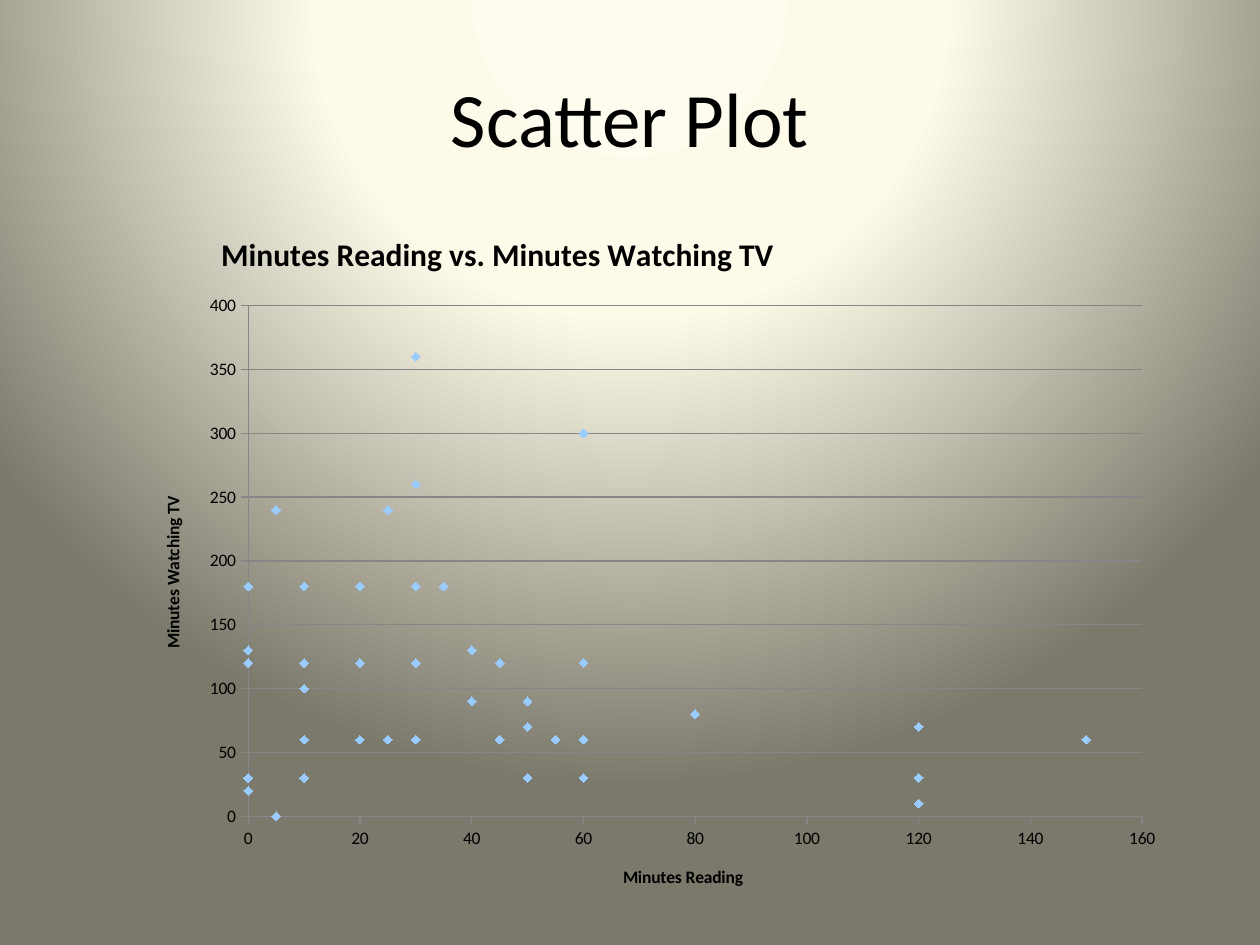
from pptx import Presentation
from pptx import util as u
from pptx.chart.data import XyChartData
from pptx.dml.color import RGBColor
from pptx.enum import chart as ch, text
from pptx.oxml import parse_xml
from pptx.oxml.ns import nsdecls, qn

COLORS = {"text": "000000", "marker": "99CCFF", "axis": "868686"}
BACKGROUND = [(0, "FEFCEE"), (40, "FDFAEA"), (100, "7B796B")]
FONT = "Calibri"

# Survey answers, one reader per position
READING = [
    30, 30, 60, 0, 60, 0, 0, 45, 20, 10, 10, 80, 0, 0,
    30, 120, 60, 10, 50, 60, 45, 150, 20, 30, 10, 5, 0, 40,
    45, 60, 25, 35, 10, 50, 60, 40, 120, 25, 5, 30, 120, 60,
    120, 0, 20, 0, 30, 50, 55, 30, 60, 10, 60, 60, 30, 20]
WATCHING = [
    260, 360, 300, 130, 30, 30, 180, 60, 60, 180, 30, 80, 20, 20,
    120, 10, 120, 120, 70, 60, 120, 60, 180, 120, 100, 240, 30, 130,
    60, 300, 240, 180, 60, 30, 120, 90, 30, 60, 0, 180, 30, 60,
    70, 120, 120, 180, 60, 90, 60, 60, 60, 120, 60, 120, 120, 180]


def rgb(name):
    return RGBColor.from_string(COLORS[name])


def write(frame, words, size=10, bold=False, align=text.PP_ALIGN.CENTER):
    paragraph = frame.paragraphs[0]
    paragraph.alignment = align
    run = paragraph.add_run()
    run.text = words
    font = run.font
    font.name, font.size, font.bold = FONT, u.Pt(size), bold
    font.color.rgb = rgb("text")


def layout(**percent):
    """Manual chart layout, in percent of the chart's size."""
    parts = {"layoutTarget": "inner"} if "w" in percent else {}
    parts.update(xMode="edge", yMode="edge")
    parts.update((side, value / 100) for side, value in percent.items())
    body = "".join(f'<c:{tag} val="{val}"/>' for tag, val in parts.items())
    return parse_xml(f'<c:layout {nsdecls("c")}><c:manualLayout>{body}'
                     '</c:manualLayout></c:layout>')


def no_fill():
    return parse_xml(f'<c:spPr {nsdecls("c", "a")}><a:noFill/>'
                     '<a:ln><a:noFill/></a:ln></c:spPr>')


class Deck:
    def __init__(self, width, height):
        self.prs = Presentation()
        self.prs.slide_width, self.prs.slide_height = u.Pt(width), u.Pt(height)
        self.slide = self.prs.slides.add_slide(self.prs.slide_layouts[6])

    def background(self, stops):
        fill = self.slide.background.fill
        fill.solid()
        properties = self.slide.background._cSld.bg.bgPr
        glow = "".join(f'<a:gs pos="{pos * 1000}"><a:srgbClr val="{color}"/></a:gs>'
                       for pos, color in stops)
        properties.replace(properties[0], parse_xml(
            f'<a:gradFill {nsdecls("a")} rotWithShape="1"><a:gsLst>{glow}</a:gsLst>'
            '<a:path path="circle"><a:fillToRect l="50000" t="-80000" '
            'r="50000" b="180000"/></a:path></a:gradFill>'))

    def heading(self, words, left, top, width, height):
        frame = self.slide.shapes.add_textbox(
            *map(u.Pt, (left, top, width, height))).text_frame
        frame.word_wrap = True
        frame.vertical_anchor = text.MSO_ANCHOR.MIDDLE
        write(frame, words, size=44)

    def chart_title(self, title, words, x, y, size=10, rotation=0):
        write(title.text_frame, words, size=size, bold=True)
        title.text_frame._txBody.bodyPr.set("rot", str(rotation * 60000))
        element = title._element
        for old in element.findall(qn("c:layout")):
            element.remove(old)
        element.find(qn("c:tx")).addnext(layout(x=x, y=y))

    def axis(self, axis, top, step):
        axis.minimum_scale, axis.maximum_scale, axis.major_unit = 0, top, step
        axis.major_tick_mark = ch.XL_TICK_MARK.OUTSIDE
        axis.format.line.color.rgb = rgb("axis")
        axis.format.line.width = u.Pt(0.75)

    def scatter(self, left, top, width, height):
        data = XyChartData()
        answers = data.add_series("Series 1")
        for reading, watching in zip(READING, WATCHING):
            answers.add_data_point(reading, watching)
        chart = self.slide.shapes.add_chart(
            ch.XL_CHART_TYPE.XY_SCATTER,
            *map(u.Pt, (left, top, width, height)), data).chart
        chart.has_legend = False
        chart.font.name, chart.font.size = FONT, u.Pt(10)
        chart.font.color.rgb = rgb("text")

        # Markers only
        plot = chart.plots[0]
        plot.vary_by_categories = False
        series = plot.series[0]
        series.smooth = False
        series.format.line.fill.background()
        marker = series.marker
        marker.style, marker.size = ch.XL_MARKER_STYLE.DIAMOND, 5
        marker.format.fill.solid()
        marker.format.fill.fore_color.rgb = rgb("marker")
        marker.format.line.color.rgb = rgb("marker")

        # Axes and grid
        reading_axis, watching_axis = chart.category_axis, chart.value_axis
        self.axis(reading_axis, 160, 20)
        self.axis(watching_axis, 400, 50)
        reading_axis.has_major_gridlines = False
        watching_axis.has_major_gridlines = True
        grid = watching_axis.major_gridlines.format.line
        grid.color.rgb, grid.width = rgb("axis"), u.Pt(0.75)

        # Titles
        self.chart_title(chart.chart_title, "Minutes Reading vs. Minutes Watching TV",
                         7.6, 2.4, size=18)
        self.chart_title(reading_axis.axis_title, "Minutes Reading", 46.5, 92.7)
        self.chart_title(watching_axis.axis_title, "Minutes Watching TV",
                         2.1, 40.2, rotation=-90)

        # Plot position and clear backgrounds
        space = chart._chartSpace
        area = space.chart.plotArea
        for old in area.findall(qn("c:layout")):
            area.remove(old)
        area.insert(0, layout(x=10.75, y=13.6, w=86, h=72.6))
        area.append(no_fill())
        space.chart.addnext(no_fill())


def main():
    deck = Deck(720, 540)
    deck.background(BACKGROUND)
    deck.heading("Scatter Plot", 36, 21.6, 648, 90)
    deck.scatter(78, 120, 594, 402)
    deck.prs.save("out.pptx")


if __name__ == "__main__":
    main()
